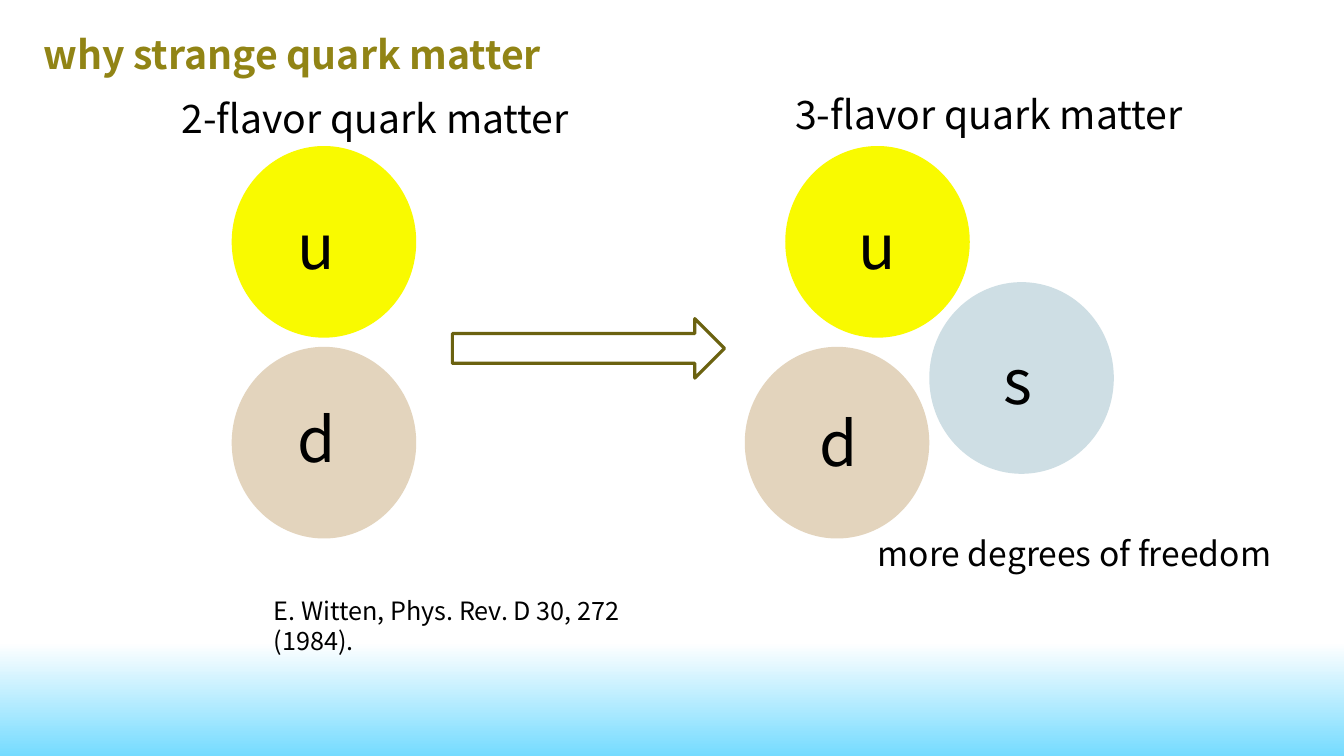
from pptx import Presentation
from pptx.dml.color import RGBColor
from pptx.enum.shapes import MSO_SHAPE
from pptx.enum.text import MSO_AUTO_SIZE
from pptx.util import Cm, Pt

ELLIPSE = MSO_SHAPE.OVAL
RIGHT_ARROW = MSO_SHAPE.RIGHT_ARROW
GROW = MSO_AUTO_SIZE.SHAPE_TO_FIT_TEXT

BLACK = RGBColor(0x00, 0x00, 0x00)
WHITE = RGBColor(0xFF, 0xFF, 0xFF)
SKY = RGBColor(0x75, 0xDB, 0xFF)
OLIVE = RGBColor(0x91, 0x84, 0x15)
DARK_OLIVE = RGBColor(0x6B, 0x62, 0x10)
YELLOW = RGBColor(0xF9, 0xFA, 0x00)
TAN = RGBColor(0xE3, 0xD4, 0xBD)
PALE_BLUE = RGBColor(0xCE, 0xDE, 0xE4)

QUARK_COLORS = {"u": YELLOW, "d": TAN, "s": PALE_BLUE}
UPPER_ROW = 3.68
LOWER_ROW = 8.74


class QuarkSlide:
    font_name = "Noto Sans CJK KR"
    quark_width = 4.65
    quark_height = 4.83
    text_width = 11.28

    def __init__(self, slide):
        self.slide = slide

    def background(self, top_color, bottom_color):
        fill = self.slide.background.fill
        fill.gradient()
        fill.gradient_angle = 270
        stops = fill.gradient_stops
        for stop, position, color in zip(stops, (0.85, 1), (top_color, bottom_color)):
            stop.position = position
            stop.color.rgb = color

    def text(self, text, left, top, height, size, width=text_width,
             color=BLACK, bold=False, inset=0.25, shapes=None):
        shapes = shapes or self.slide.shapes
        box = shapes.add_textbox(Cm(left), Cm(top), Cm(width), Cm(height))
        frame = box.text_frame
        frame.word_wrap = True
        frame.auto_size = GROW
        frame.margin_left = Cm(inset)
        paragraph = frame.paragraphs[0]
        run = paragraph.add_run()
        run.text = text
        run.font.name = self.font_name
        run.font.size = Pt(size)
        run.font.bold = bold
        run.font.color.rgb = color

    def quark(self, flavor, left, top, letter_left, letter_top, grouped=False):
        shapes = self.slide.shapes
        if grouped:
            shapes = shapes.add_group_shape().shapes
        circle = shapes.add_shape(ELLIPSE, Cm(left), Cm(top),
                                  Cm(self.quark_width), Cm(self.quark_height))
        circle.shadow.inherit = False
        circle.fill.solid()
        circle.fill.fore_color.rgb = QUARK_COLORS[flavor]
        circle.line.fill.background()
        self.text(flavor, letter_left, letter_top, 2.13, 44, shapes=shapes)

    def arrow(self, left, top, width, height):
        arrow = self.slide.shapes.add_shape(RIGHT_ARROW, Cm(left), Cm(top),
                                            Cm(width), Cm(height))
        arrow.shadow.inherit = False
        arrow.fill.background()
        arrow.line.color.rgb = DARK_OLIVE
        arrow.line.width = Pt(2.25)


def main():
    presentation = Presentation()
    presentation.slide_width = Cm(33.87)
    presentation.slide_height = Cm(19.05)
    page = QuarkSlide(presentation.slides.add_slide(presentation.slide_layouts[6]))

    page.background(WHITE, SKY)
    page.text("why strange quark matter", 0.64, 0.64, 1.45, 28,
              width=18.11, color=OLIVE, bold=True, inset=0.45)

    page.text("2-flavor quark matter", 4.32, 2.24, 1.45, 28)
    page.quark("u", 5.84, UPPER_ROW, 7.24, 5.11)
    page.quark("d", 5.84, LOWER_ROW, 7.24, 9.98)

    page.arrow(11.4, 8.03, 6.86, 1.5)

    page.text("3-flavor quark matter", 19.79, 2.16, 1.45, 28)
    page.quark("u", 19.79, UPPER_ROW, 21.39, 5.11)
    page.quark("d", 18.77, LOWER_ROW, 20.4, 10.08)
    page.quark("s", 23.42, 7.11, 25.04, 8.51, grouped=True)

    page.text("more degrees of freedom", 21.87, 13.31, 1.27, 24)
    page.text("E. Witten, Phys. Rev. D 30, 272 (1984).", 6.65, 14.88, 1.02, 18)

    presentation.save("out.pptx")


if __name__ == "__main__":
    main()
